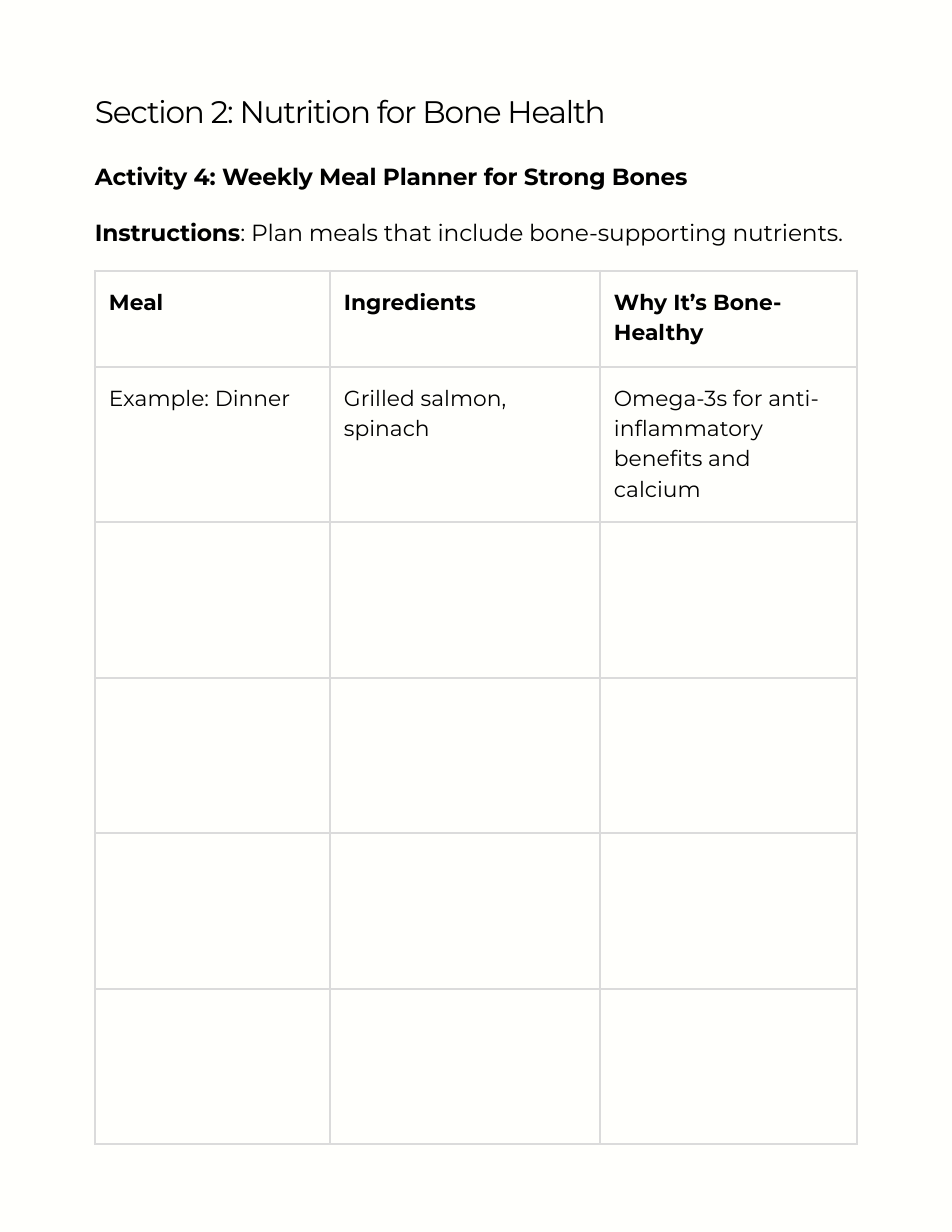
from lxml import etree
from pptx import Presentation
from pptx.dml.color import RGBColor as RGB
from pptx.enum.text import MSO_AUTO_SIZE as AutoSize
from pptx.oxml import parse_xml
from pptx.oxml.ns import nsdecls, qn
from pptx.util import Emu, Pt

THEME = {
    "font": "Montserrat",
    "paper": RGB(0xFF, 0xFF, 0xFC),
    "ink": RGB(0, 0, 0),
    "rule": "DBDBDB",
    "section": 20,
    "activity": 15,
    "cell": 14,
}
SCALE = 914400 / 112  # EMU per px


def px(n):
    return Emu(round(n * SCALE))


def write(paragraph, parts, size, leading, tracking=0):
    """Fill a paragraph with (text, bold) runs in the common style."""
    paragraph.line_spacing = Pt(leading)
    for text, bold in parts:
        run = paragraph.add_run()
        run.text = text
        font = run.font
        font.name, font.size, font.bold = THEME["font"], Pt(size), bold
        font.color.rgb = THEME["ink"]
        if tracking:
            font._element.set("spc", str(tracking))


prs = Presentation()
prs.slide_width, prs.slide_height = px(952), px(1232)
slide = prs.slides.add_slide(prs.slide_layouts[6])
slide.background.fill.solid()
slide.background.fill.fore_color.rgb = THEME["paper"]

LEFT, WIDTH = 95, 762

# Section title, then activity and instructions
headings = [
    (102, 30, THEME["section"], -80,
     [[("Section 2: Nutrition for Bone Health", False)]]),
    (162, 78, THEME["activity"], -10,
     [[("Activity 4: Weekly Meal Planner for Strong Bones", True)],
      [("Instructions", True),
       (": Plan meals that include bone-supporting nutrients.", False)]]),
]
for top, height, size, tracking, lines in headings:
    frame = slide.shapes.add_textbox(px(LEFT), px(top), px(WIDTH), px(height)).text_frame
    frame.word_wrap = True
    frame.auto_size = AutoSize.SHAPE_TO_FIT_TEXT
    frame.margin_left = frame.margin_right = frame.margin_top = frame.margin_bottom = 0
    for i, parts in enumerate(lines):
        paragraph = frame.paragraphs[0] if i == 0 else frame.add_paragraph()
        if i:
            paragraph.space_before = Pt(18)
        write(paragraph, parts, size, 18, tracking)

# Meal planner: header, one example, four rows to fill in
meals = [
    ["Meal", "Ingredients", "Why It’s Bone-Healthy"],
    ["Example: Dinner", "Grilled salmon, spinach",
     "Omega-3s for anti-inflammatory benefits and calcium"],
]
COLUMNS = [235, 270, 257]
ROWS, TABLE_TOP, TABLE_HEIGHT, HEADER_HEIGHT = 6, 271, 873, 96
PADDING = 14

planner = slide.shapes.add_table(
    ROWS, len(COLUMNS), px(LEFT), px(TABLE_TOP), px(WIDTH), px(TABLE_HEIGHT)).table
planner.first_row = planner.horz_banding = False
for column, width in zip(planner.columns, COLUMNS):
    column.width = px(width)
for r, row in enumerate(planner.rows):
    row.height = px((TABLE_HEIGHT - HEADER_HEIGHT) / (ROWS - 1) if r else HEADER_HEIGHT)
    for c, cell in enumerate(row.cells):
        cell.margin_left = cell.margin_right = px(PADDING)
        cell.margin_top = cell.margin_bottom = px(PADDING)
        if r < len(meals):
            write(cell.text_frame.paragraphs[0], [(meals[r][c], r == 0)],
                  THEME["cell"], 19.6)
        # Borders come before the fill in the cell properties
        properties = cell._tc.get_or_add_tcPr()
        for side in ("lnL", "lnR", "lnT", "lnB"):
            border = parse_xml(f'<a:{side} {nsdecls("a")} w="{Pt(1.5)}"/>')
            fill = etree.SubElement(border, qn("a:solidFill"))
            etree.SubElement(fill, qn("a:srgbClr"), val=THEME["rule"])
            properties.append(border)
        cell.fill.background()

prs.save("out.pptx")
